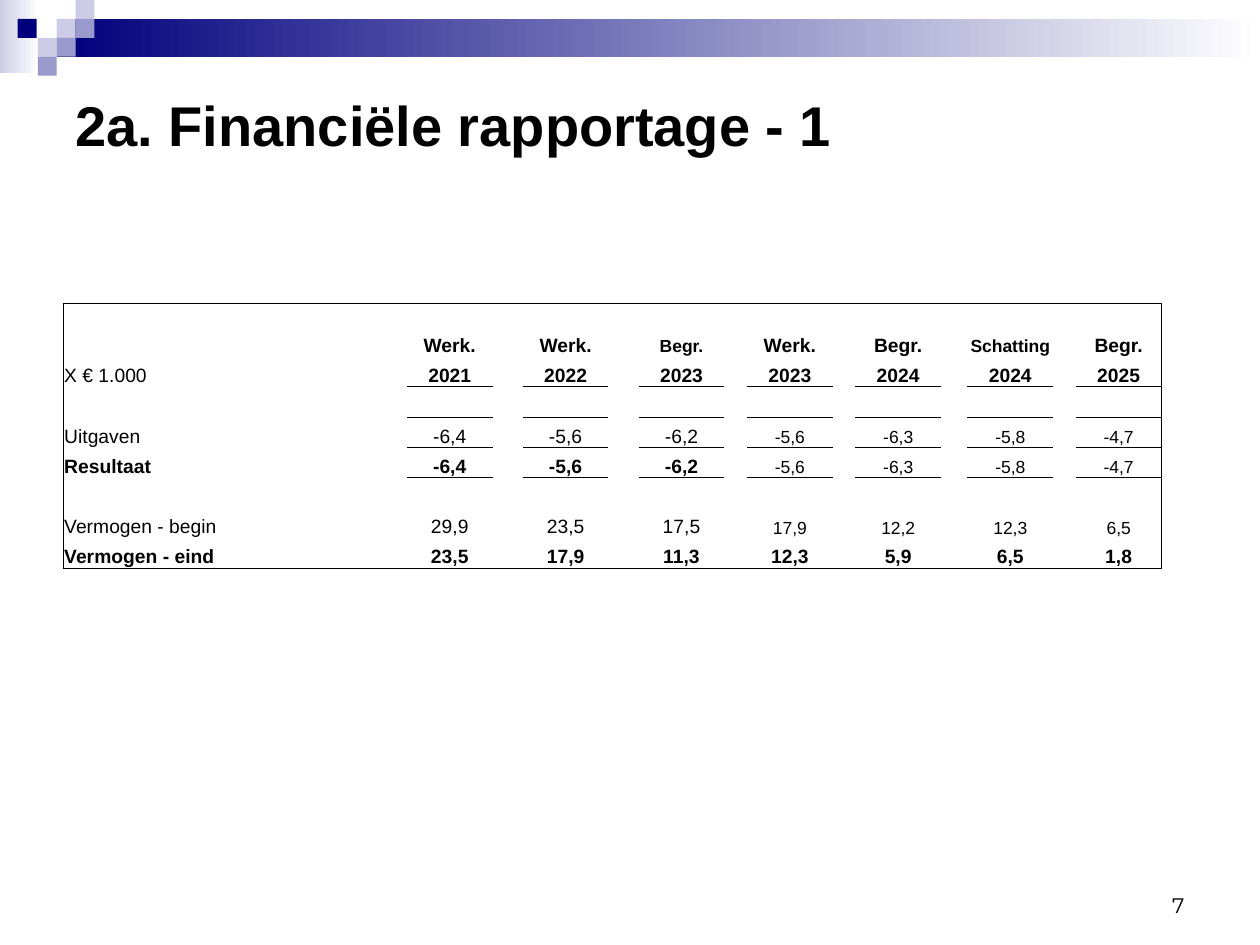
from lxml.etree import SubElement
from pptx import Presentation
from pptx.dml.color import RGBColor
from pptx.enum.shapes import MSO_SHAPE as Shape
from pptx.enum.text import MSO_ANCHOR as Anchor, PP_ALIGN as Align
from pptx.oxml import parse_xml
from pptx.oxml.ns import nsdecls, qn
from pptx.util import Inches, Pt

COLORS = {"navy": "00007D", "mid": "9999CC", "pale": "CCCCE6", "white": "FFFFFF", "black": "000000"}
NO_STYLE = "{2D5ABB26-0587-4C30-8999-92F81FD0307C}"


def add_block(page, left, top, width, height, *names):
    block = page.shapes.add_shape(Shape.RECTANGLE, *map(Inches, (left, top, width, height)))
    block.shadow.inherit = False
    block.line.fill.background()
    if len(names) == 1:
        block.fill.solid()
        block.fill.fore_color.rgb = RGBColor.from_string(COLORS[names[0]])
    else:
        block.fill.gradient()
        block.fill.gradient_angle = 0
        for stop, name in zip(block.fill.gradient_stops, names):
            stop.color.rgb = RGBColor.from_string(COLORS[name])


def write(para, text, align, **formats):
    para.alignment = align
    span = para.add_run()
    span.text = text
    for name, value in formats.items():
        setattr(span.font, name, value)
    span.font.color.rgb = RGBColor.from_string(COLORS["black"])


deck = Presentation()
deck.slide_width, deck.slide_height = Inches(10), Inches(7.5)
page = deck.slides.add_slide(deck.slide_layouts[6])

add_block(page, 0, 0, 0.31, 0.58, "pale", "white")
add_block(page, 0.45, 0.15, 9.55, 0.3, "navy", "white")
SQUARES = [(0.45, 0.15, "pale"), (0.6, 0, "pale"), (0.6, 0.15, "mid"), (0.3, 0.3, "pale"),
           (0.14, 0.15, "navy"), (0.45, 0.3, "mid"), (0.3, 0.45, "mid")]
for left, top, name in SQUARES:
    add_block(page, left, top, 0.15, 0.15, name)

TEXTS = [
    ((7.17, 6.83, 2.33, 0.5), "7", Anchor.BOTTOM, Align.RIGHT, {"size": Pt(12), "name": "Montserrat"}),
    ((0.5, 0.5, 9, 0.97), "2a. Financiële rapportage - 1", Anchor.MIDDLE, Align.LEFT,
     {"size": Pt(32), "name": "Arial", "bold": True}),
]
for place, text, anchor, align, formats in TEXTS:
    box = page.shapes.add_textbox(*map(Inches, place))
    box.text_frame.word_wrap = True
    box.text_frame.vertical_anchor = anchor
    write(box.text_frame.paragraphs[0], text, align, **formats)

ROWS = [
    ["", "Werk.", "Werk.", "Begr.", "Werk.", "Begr.", "Schatting", "Begr."],
    ["X € 1.000", "2021", "2022", "2023", "2023", "2024", "2024", "2025"],
    [""] * 8,
    ["Uitgaven", "-6,4", "-5,6", "-6,2", "-5,6", "-6,3", "-5,8", "-4,7"],
    ["Resultaat", "-6,4", "-5,6", "-6,2", "-5,6", "-6,3", "-5,8", "-4,7"],
    [""] * 8,
    ["Vermogen - begin", "29,9", "23,5", "17,5", "17,9", "12,2", "12,3", "6,5"],
    ["Vermogen - eind", "23,5", "17,9", "11,3", "12,3", "5,9", "6,5", "1,8"],
]
LABEL_WIDTHS = [1.6, 0.28, 0.45, 0.14, 0.26]
GAPS = [0.24, 0.24, 0.24, 0.18, 0.18, 0.21, 0.18][1:]
VALUE_WIDTH = 0.68
widths = LABEL_WIDTHS + [VALUE_WIDTH]
for gap in GAPS:
    widths += [gap, VALUE_WIDTH]
heights = [0.42] + [0.24] * 7
VALUE_COLUMNS = list(range(5, len(widths), 2))
SMALL = {(0, 3), (0, 6)} | {(row, item) for row in (3, 4, 6) for item in range(4, 8)}
BOLD_ROWS = {0, 1, 4, 7}
REGULAR = {(1, 0)} | {(4, item) for item in range(4, 8)}

frame = page.shapes.add_table(len(heights), len(widths), Inches(0.5), Inches(2.41),
                              Inches(sum(widths)), Inches(sum(heights)))
table = frame.table
table.first_row = table.horz_banding = False
table._tbl.tblPr.find(qn("a:tableStyleId")).text = NO_STYLE
for column, width in zip(table.columns, widths):
    column.width = Inches(width)
for line, height in zip(table.rows, heights):
    line.height = Inches(height)

last_row, last_column = len(heights) - 1, len(widths) - 1
CELL_FORMAT = {"vertical_anchor": Anchor.BOTTOM, "margin_left": Inches(0.01), "margin_right": Inches(0.01),
               "margin_top": Inches(0.01), "margin_bottom": 0}
for row in range(len(heights)):
    for column in range(len(widths)):
        cell = table.cell(row, column)
        for name, value in CELL_FORMAT.items():
            setattr(cell, name, value)
        cell.fill.background()
        para = cell.text_frame.paragraphs[0]
        is_value = column in VALUE_COLUMNS
        item = VALUE_COLUMNS.index(column) + 1 if is_value else 0
        text = ROWS[row][item] if is_value or column == 0 else ""
        if text:
            write(para, text, Align.CENTER if is_value else Align.LEFT, name="Arial",
                  size=Pt(10 if (row, item) in SMALL else 11),
                  bold=row in BOLD_ROWS and (row, item) not in REGULAR)
        else:
            SubElement(para._p, qn("a:endParaRPr")).set("sz", "1000")
        edges = {
            "lnL": column == 0,
            "lnR": column == last_column,
            "lnT": row == 0 or is_value and row in (2, 4),
            "lnB": row == last_row or is_value and row in (1, 3),
        }
        properties = cell._tc.get_or_add_tcPr()
        drawn = [edge for edge, shown in edges.items() if shown]
        for position, edge in enumerate(drawn):
            properties.insert(position, parse_xml(
                f'<a:{edge} {nsdecls("a")} w="{Pt(0.5)}"><a:solidFill>'
                f'<a:srgbClr val="{COLORS["black"]}"/></a:solidFill></a:{edge}>'))

deck.save("out.pptx")
